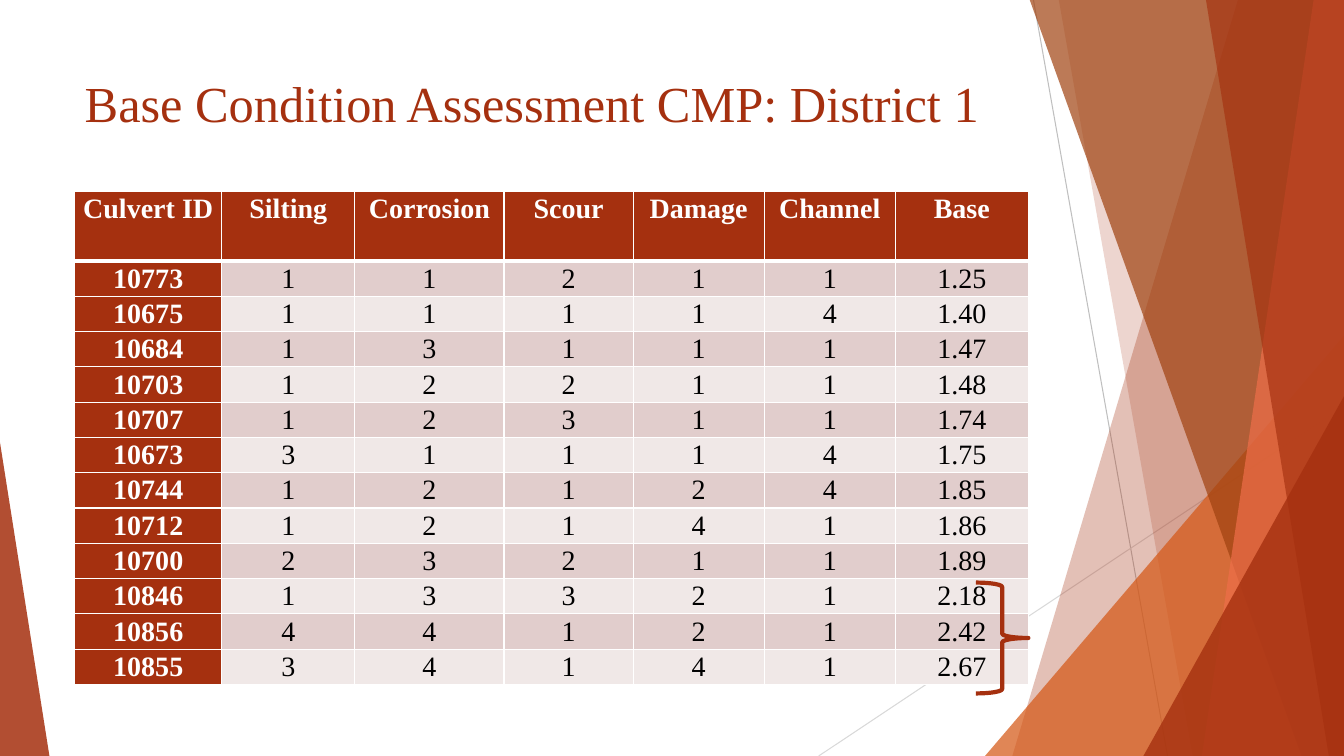
from lxml.etree import SubElement
from pptx import Presentation
from pptx.dml.color import RGBColor
from pptx.enum.shapes import MSO_CONNECTOR, MSO_SHAPE
from pptx.enum.text import MSO_ANCHOR, PP_ALIGN
from pptx.oxml import parse_xml
from pptx.oxml.ns import nsdecls, qn
from pptx.util import Inches, Pt

FONT = "Times New Roman"
RUST, WHITE, BLACK = "A5300F", "FFFFFF", "000000"
BANDS = ["E1CDCC", "F0E8E7"]
TITLE = "Base Condition Assessment CMP: District 1"
HEADER = ["Culvert ID", "Silting", "Corrosion", "Scour", "Damage", "Channel", "Base"]
CULVERTS = [
    ("10773", 1, 1, 2, 1, 1, "1.25"),
    ("10675", 1, 1, 1, 1, 4, "1.40"),
    ("10684", 1, 3, 1, 1, 1, "1.47"),
    ("10703", 1, 2, 2, 1, 1, "1.48"),
    ("10707", 1, 2, 3, 1, 1, "1.74"),
    ("10673", 3, 1, 1, 1, 4, "1.75"),
    ("10744", 1, 2, 1, 2, 4, "1.85"),
    ("10712", 1, 2, 1, 4, 1, "1.86"),
    ("10700", 2, 3, 2, 1, 1, "1.89"),
    ("10846", 1, 3, 3, 2, 1, "2.18"),
    ("10856", 4, 4, 1, 2, 1, "2.42"),
    ("10855", 3, 4, 1, 4, 1, "2.67"),
]
COL_WIDTHS = [1.46, 1.32, 1.48, 1.28, 1.3, 1.3, 1.32]
HEADER_H, ROW_H = 0.69, 0.35

W, H, TOP = 13.33, 7.5, -0.01
THIN_LINES = [((10.25, 0), (11.58, H), "BFBFBF"), ((W, 4.03), (8.12, H), "D9D9D9")]
FACETS = [
    ("band", (12.28, 10.04), RUST, 30),
    ("band", (10.5, 11.83), RUST, 20),
    ("triangle", (9.77, 3.33, 3.56, 4.17, 1), "D55816", 72),
    ("band", (10.21, 12.91), "A04210", 70),
    ("band", (13.03, 11.92), "EE6E4A", 70),
    ("band", (11.96, 13.18), RUST, 65),
    ("triangle", (11.34, 3.93, 1.99, 3.57, 1), RUST, 80),
    ("triangle", (0, 4.39, 0.49, 3.11, 0), RUST, 85),
]


def paint(color_format, color):
    color_format.rgb = RGBColor.from_string(color)


def fill(obj, color):
    obj.fill.solid()
    paint(obj.fill.fore_color, color)


def style_run(r, size, color, bold=False):
    r.font.name, r.font.size, r.font.bold = FONT, Pt(size), bold
    paint(r.font.color, color)


def add_thin_line(s, start, end, color):
    c = s.shapes.add_connector(MSO_CONNECTOR.STRAIGHT, *map(Inches, start + end))
    c.line.width = Pt(0.75)
    paint(c.line.color, color)
    SubElement(c.element.spPr, qn("a:effectLst"))


def add_facet(s, kind, geometry, color, opacity):
    if kind == "band":
        top_x, bottom_x = geometry
        points = [(W, TOP), (W, H), (bottom_x, H)]
        fb = s.shapes.build_freeform(Inches(top_x), Inches(TOP))
        fb.add_line_segments([(Inches(x), Inches(y)) for x, y in points])
        sp = fb.convert_to_shape()
    else:
        *box, apex = geometry
        sp = s.shapes.add_shape(MSO_SHAPE.ISOSCELES_TRIANGLE, *map(Inches, box))
        sp.adjustments[0] = apex
    fill(sp, color)
    sp.line.fill.background()
    sp.shadow.inherit = False
    clr = sp.element.spPr.find(qn("a:solidFill"))[0]
    SubElement(clr, qn("a:alpha"), val=str(opacity * 1000))


def add_borders(cell, bottom):
    tcPr = cell._tc.get_or_add_tcPr()
    for i, (side, width) in enumerate([("L", 1), ("R", 1), ("T", 1), ("B", bottom)]):
        tcPr.insert(i, parse_xml(
            f'<a:ln{side} {nsdecls("a")} w="{Pt(width)}"><a:solidFill>'
            f'<a:srgbClr val="{WHITE}"/></a:solidFill></a:ln{side}>'))


def format_cell(cell, value, row, col):
    label = row == 0 or col == 0
    cell.margin_left = cell.margin_right = Inches(0.07)
    cell.margin_top = cell.margin_bottom = 0
    fill(cell, RUST if label else BANDS[(row - 1) % 2])
    add_borders(cell, 3 if row == 0 else 1)
    p = cell.text_frame.paragraphs[0]
    p.text = str(value)
    p.alignment, p.line_spacing = PP_ALIGN.CENTER, 1.07
    style_run(p.runs[0], 20, WHITE if label else BLACK, label)


def add_culvert_table(s):
    rows = [HEADER] + CULVERTS
    height = HEADER_H + ROW_H * len(CULVERTS)
    table = s.shapes.add_table(len(rows), len(HEADER), Inches(0.74), Inches(1.9),
                               Inches(sum(COL_WIDTHS)), Inches(height)).table
    table.first_col, table.horz_banding = True, False
    for column, width in zip(table.columns, COL_WIDTHS):
        column.width = Inches(width)
    for i, values in enumerate(rows):
        table.rows[i].height = Inches(ROW_H if i else HEADER_H)
        for j, value in enumerate(values):
            format_cell(table.cell(i, j), value, i, j)


def add_title(s):
    title = s.shapes.title
    title.left, title.top, title.width, title.height = map(Inches, (0.74, 0.67, 9.4, 1.44))
    tf = title.text_frame
    tf.text = TITLE
    tf.word_wrap, tf.vertical_anchor = True, MSO_ANCHOR.TOP
    p = tf.paragraphs[0]
    p.alignment = PP_ALIGN.LEFT
    style_run(p.runs[0], 36, RUST)


def add_brace(s):
    sp = s.shapes.add_shape(MSO_SHAPE.RIGHT_BRACE, *map(Inches, (9.68, 5.78, 0.52, 1.1)))
    sp.fill.background()
    sp.line.width = Pt(3)
    paint(sp.line.color, RUST)
    sp.shadow.inherit = False


def main():
    prs = Presentation()
    prs.slide_width, prs.slide_height = Inches(W), Inches(H)
    s = prs.slides.add_slide(prs.slide_layouts[5])
    fill(s.background, WHITE)
    for line in THIN_LINES:
        add_thin_line(s, *line)
    for facet in FACETS:
        add_facet(s, *facet)
    add_title(s)
    add_culvert_table(s)
    add_brace(s)
    prs.save("out.pptx")


if __name__ == "__main__":
    main()
